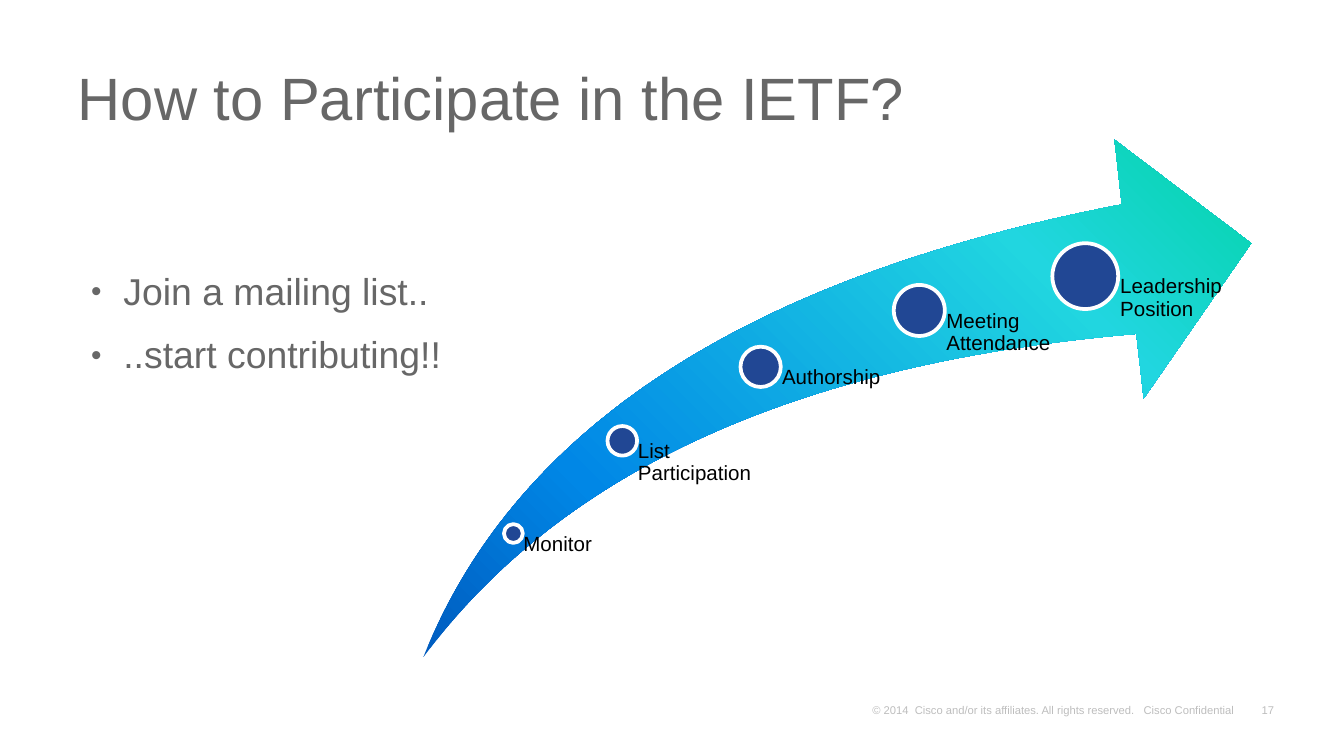
from lxml import etree
from pptx import Presentation
from pptx.dml.color import RGBColor
from pptx.enum.shapes import MSO_SHAPE as SHAPE
from pptx.enum.text import MSO_ANCHOR as ANCHOR, PP_ALIGN as ALIGN
from pptx.oxml import parse_xml
from pptx.oxml.ns import nsdecls, qn
from pptx.util import Inches, Pt

GREY = RGBColor(0x67, 0x67, 0x67)
BLACK = RGBColor(0, 0, 0)
WHITE = RGBColor(0xFF, 0xFF, 0xFF)
NAVY = RGBColor(0x21, 0x47, 0x94)
SWOOSH_STOPS = [(0, "03D4A8"), (25, "21D6E0"), (75, "0087E6"), (100, "005CBF")]

# Slide in 16:9
prs = Presentation()
prs.slide_width = Inches(10)
prs.slide_height = Inches(10 * 9 / 16)
slide = prs.slides.add_slide(prs.slide_layouts[6])


def add_frame(left, top, width, height, insets, anchor=ANCHOR.TOP):
    frame = slide.shapes.add_textbox(
        Inches(left), Inches(top), Inches(width), Inches(height)).text_frame
    frame.word_wrap = True
    frame.vertical_anchor = anchor
    frame.margin_left, frame.margin_top, frame.margin_right, frame.margin_bottom = (
        Inches(inset) for inset in insets)
    return frame


def add_text(paragraph, text, size, color, spacing=1.0):
    paragraph.line_spacing = spacing
    run = paragraph.add_run()
    run.text = text
    run.font.name = "Arial"
    run.font.size = Pt(size)
    run.font.color.rgb = color
    return run


# Footer: page number and copyright line in 25 % black
for text, left, width, align, wrap in [
    ("17", 9.31, 0.24, ALIGN.RIGHT, False),
    ("© 2014  Cisco and/or its affiliates. All rights reserved.   Cisco Confidential",
     6.42, 2.91, ALIGN.LEFT, True),
]:
    footer = add_frame(left, 5.19, width, 0.17, (0.07, 0.03, 0.07, 0.03), ANCHOR.BOTTOM)
    footer.word_wrap = wrap
    footer.paragraphs[0].alignment = align
    run = add_text(footer.paragraphs[0], text, 6, BLACK)
    for color in run._r.iter(qn("a:srgbClr")):
        etree.SubElement(color, qn("a:alpha")).set("val", "25000")

# Title
title = add_frame(0.48, 0.37, 9.13, 0.8, (0.1, 0.05, 0.1, 0.05), ANCHOR.MIDDLE)
add_text(title.paragraphs[0], "How to Participate in the IETF?", 32, GREY, 0.8)

# Bulleted advice
advice = add_frame(0.51, 1.97, 9.05, 2.96, (0.1, 0.05, 0.1, 0.05))
for i, text in enumerate(["Join a mailing list..", "..start contributing!!"]):
    item = advice.add_paragraph() if i else advice.paragraphs[0]
    props = item._p.get_or_add_pPr()
    props.set("marL", str(Inches(0.31)))
    props.set("indent", str(Inches(-0.24)))
    bullet_color = etree.SubElement(props, qn("a:buClr"))
    etree.SubElement(bullet_color, qn("a:srgbClr")).set("val", str(GREY))
    etree.SubElement(props, qn("a:buSzPct")).set("val", "80000")
    etree.SubElement(props, qn("a:buFont")).set("typeface", "Arial")
    etree.SubElement(props, qn("a:buChar")).set("char", "•")
    if i:
        item.space_before = Pt(11.1)
    add_text(item, text, 20, GREY, 0.95)

# Rising arrow, its gradient spreading from the top right corner
swoosh = slide.shapes.add_shape(
    SHAPE.SWOOSH_ARROW, Inches(3.15), Inches(1.04), Inches(6.16), Inches(3.85))
swoosh.shadow.inherit = False
swoosh.adjustments[0] = swoosh.adjustments[1] = 0.25
swoosh.line.fill.background()
stops = "".join(f'<a:gs pos="{pos * 1000}"><a:srgbClr val="{color}"/></a:gs>'
                for pos, color in SWOOSH_STOPS)
swoosh._element.spPr.find(qn("a:prstGeom")).addnext(parse_xml(
    f'<a:gradFill {nsdecls("a")} rotWithShape="1"><a:gsLst>{stops}</a:gsLst>'
    '<a:path path="circle"><a:fillToRect l="100000" b="100000"/></a:path></a:gradFill>'))

# Milestones: each label starts at the centre of its dot
LABEL_BOTTOM = 4.89
for text, left, top, dot_size, label_width in [
    ("Monitor", 3.75, 3.9, 0.14, 0.81),
    ("List Participation", 4.52, 3.17, 0.22, 1.02),
    ("Authorship", 5.51, 2.58, 0.3, 1.19),
    ("Meeting Attendance", 6.65, 2.12, 0.38, 1.23),
    ("Leadership Position", 7.83, 1.81, 0.49, 1.23),
]:
    dot = slide.shapes.add_shape(
        SHAPE.OVAL, Inches(left), Inches(top), Inches(dot_size), Inches(dot_size))
    dot.shadow.inherit = False
    dot.fill.solid()
    dot.fill.fore_color.rgb = NAVY
    dot.line.color.rgb = WHITE
    dot.line.width = Pt(2)
    center_x, center_y = left + dot_size / 2, top + dot_size / 2
    label = add_frame(center_x, center_y, label_width, LABEL_BOTTOM - center_y,
                      (dot_size * 0.53, 0, 0, 0))
    add_text(label.paragraphs[0], text, 11, BLACK, 0.9)

prs.save("out.pptx")
